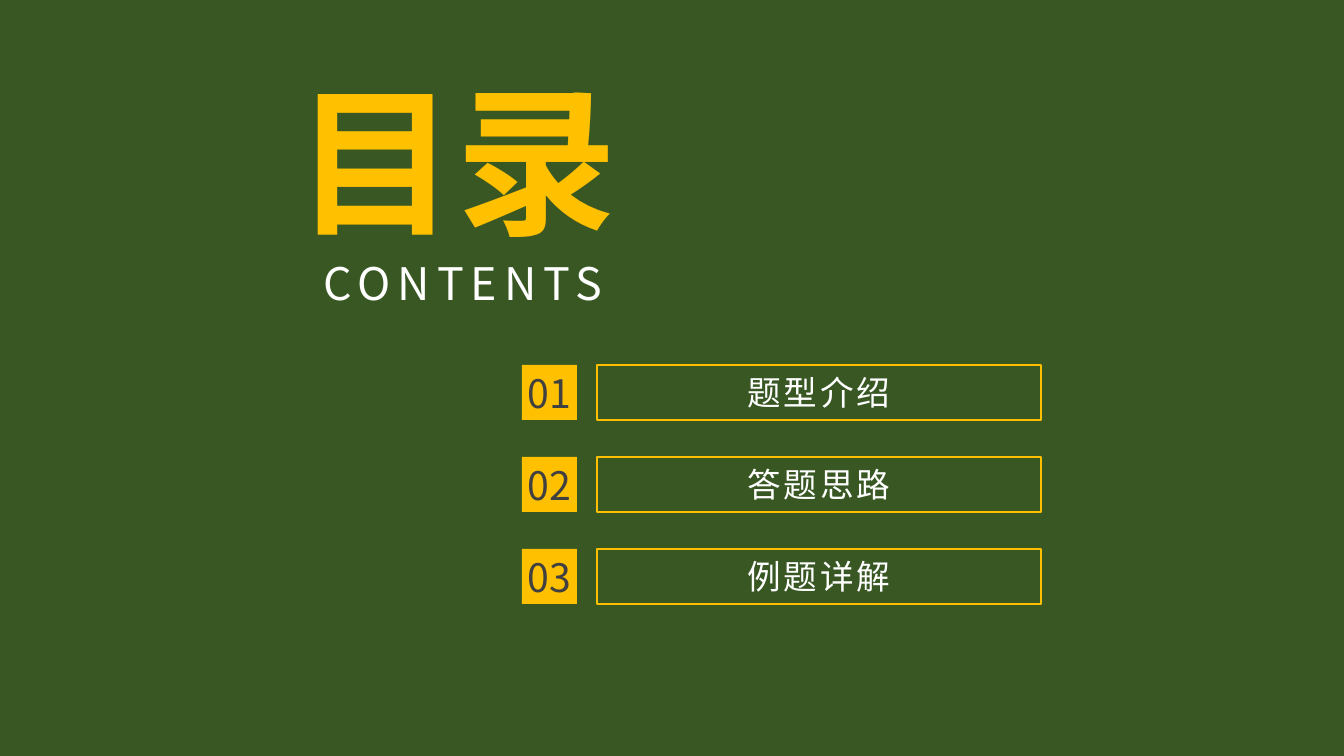
from pptx import Presentation
from pptx import util as u
from pptx.dml.color import RGBColor
from pptx.enum import shapes, text
from pptx.oxml.ns import qn
from lxml import etree

GREEN = RGBColor(0x38, 0x57, 0x23)
GOLD = RGBColor(0xFF, 0xC0, 0x00)
WHITE = RGBColor(0xFF, 0xFF, 0xFF)
GRAY = RGBColor(0x40, 0x40, 0x40)
FONT = "Noto Sans CJK SC"
MID = text.PP_ALIGN.CENTER


def px(*nums):
    return [u.Emu(round(n * 914400 / 100.8)) for n in nums]


def write(shape, words, size, color, bold=False, gap=0, align=MID,
          anchor=text.MSO_ANCHOR.MIDDLE, grow=False):
    frame = shape.text_frame
    frame.word_wrap = not grow
    frame.vertical_anchor = anchor
    if grow:
        frame.auto_size = text.MSO_AUTO_SIZE.SHAPE_TO_FIT_TEXT
    else:
        frame.margin_left = frame.margin_right = 0
        frame.margin_top = frame.margin_bottom = 0
    para = frame.paragraphs[0]
    para.alignment = align
    run = para.add_run()
    run.text = words
    font = run.font
    font.size = u.Pt(size)
    font.bold = bold
    font.name = FONT
    font.color.rgb = color
    props = run._r.get_or_add_rPr()
    if gap:
        props.set("spc", str(gap * 100))
    etree.SubElement(props, qn("a:ea"), typeface=FONT)


deck = Presentation()
deck.slide_width, deck.slide_height = px(1344, 756)
slide = deck.slides.add_slide(deck.slide_layouts[5])
slide.background.fill.solid()
slide.background.fill.fore_color.rgb = GREEN

title = slide.shapes.title
title.left, title.top, title.width, title.height = px(285, 56, 346, 206)
write(title, "目录", 115, GOLD, bold=True, align=text.PP_ALIGN.LEFT,
      anchor=text.MSO_ANCHOR.TOP, grow=True)

sub = slide.shapes.add_textbox(*px(303, 251, 320, 65))
write(sub, "CONTENTS", 32, WHITE, gap=5, anchor=text.MSO_ANCHOR.TOP, grow=True)

RECT = shapes.MSO_SHAPE.RECTANGLE
for i, topic in enumerate(["题型介绍", "答题思路", "例题详解"]):
    top = 365 + i * 92
    badge = slide.shapes.add_shape(RECT, *px(522, top, 55, 55))
    badge.shadow.inherit = False
    badge.fill.solid()
    badge.fill.fore_color.rgb = GOLD
    badge.line.fill.background()
    write(badge, f"{i + 1:02}", 28, GRAY)

    label = slide.shapes.add_shape(RECT, *px(597, top, 444, 55))
    label.shadow.inherit = False
    label.fill.background()
    label.line.color.rgb = GOLD
    label.line.width = u.Pt(1)
    write(label, topic, 24, WHITE, gap=2)

deck.save("out.pptx")
